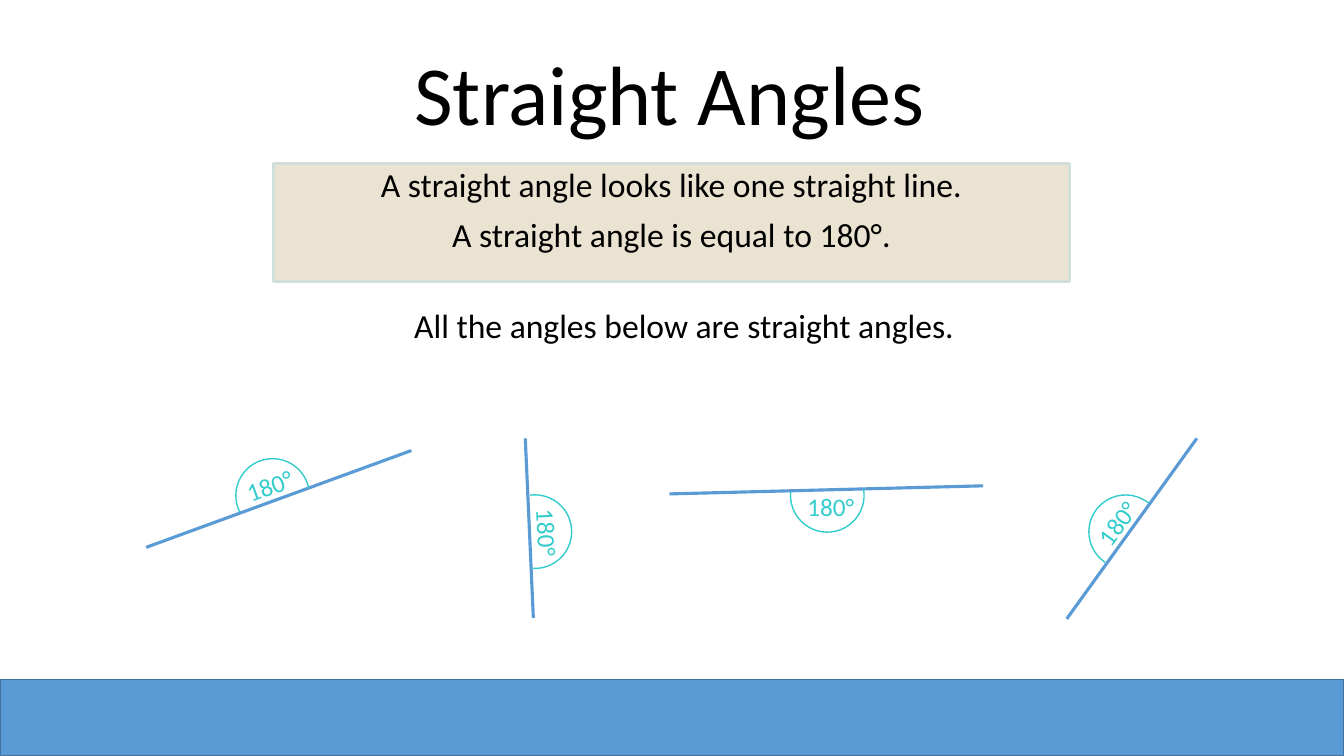
from dataclasses import dataclass

import lxml.etree
import pptx
import pptx.dml.color
import pptx.enum.shapes
import pptx.enum.text
import pptx.oxml.ns
import pptx.presentation
import pptx.shapes.autoshape
import pptx.shapes.base
import pptx.slide
import pptx.util

Inches = pptx.util.Inches
Pt = pptx.util.Pt
Shapes = pptx.enum.shapes.MSO_SHAPE
Align = pptx.enum.text.PP_ALIGN
Anchor = pptx.enum.text.MSO_ANCHOR


@dataclass(frozen=True)
class Theme:
    font: str = "Calibri"
    text: str = "000000"
    blue: str = "5B9BD5"
    blue_edge: str = "43739E"
    sand: str = "EBE3D2"
    sand_edge: str = "D1DFDA"
    teal: str = "33CCCC"
    title_size: float = 60
    body_size: float = 24
    label_size: float = 18
    thin: float = 1
    thick: float = 2.25


@dataclass(frozen=True)
class StraightAngle:
    """A line, the arc on one side of it and its label; arc angles are in degrees."""
    start: tuple[float, float]
    end: tuple[float, float]
    arc_corner: tuple[float, float]
    arc_turn: float
    arc_from: float
    arc_to: float
    label_corner: tuple[float, float]
    label_turn: float


THEME = Theme()
ARC_SIZE = 0.73
LABEL_SIZE = (1.39, 0.4)
ANGLES = [
    StraightAngle((4.08, 4.47), (1.45, 5.43), (2.34, 4.55), 300.3, 212.75, 48.59, (2.32, 4.49), 339.9),
    StraightAngle((5.21, 4.35), (5.29, 6.13), (4.94, 4.91), 47.5, 215.25, 45.79, (4.75, 5.45), 87.3),
    StraightAngle((9.75, 4.82), (6.64, 4.9), (7.84, 4.55), 136.8, 213, 48.59, (7.91, 4.83), 0),
    StraightAngle((11.87, 4.35), (10.58, 6.14), (10.8, 4.91), 264.1, 219.57, 45.02, (10.6, 4.7), 306.6),
]


def rgb(color: str) -> pptx.dml.color.RGBColor:
    return pptx.dml.color.RGBColor.from_string(color)


def write_text(box: pptx.shapes.autoshape.Shape, lines: list[str], *, size: float,
               color: str = THEME.text, align: Align = Align.CENTER,
               anchor: Anchor = Anchor.TOP, line_spacing: float = 1,
               space_before: float = 0) -> None:
    frame = box.text_frame
    frame.word_wrap = True
    frame.vertical_anchor = anchor
    for index, line in enumerate(lines):
        para = frame.add_paragraph() if index else frame.paragraphs[0]
        para.alignment = align
        para.line_spacing = line_spacing
        para.space_before = Pt(space_before)
        span = para.add_run()
        span.text = line
        span.font.name = THEME.font
        span.font.size = Pt(size)
        span.font.color.rgb = rgb(color)


def add_text(page: pptx.slide.Slide, left: float, top: float, width: float, height: float,
             text: str, **text_format) -> pptx.shapes.autoshape.Shape:
    box = page.shapes.add_textbox(Inches(left), Inches(top), Inches(width), Inches(height))
    write_text(box, [text], **text_format)
    return box


def add_outlined(page: pptx.slide.Slide, kind: Shapes, left: float, top: float, width: float,
                 height: float, *, edge: str, weight: float,
                 fill: str | None = None) -> pptx.shapes.autoshape.Shape:
    shape = page.shapes.add_shape(kind, Inches(left), Inches(top), Inches(width), Inches(height))
    shape.shadow.inherit = False
    if fill is None:
        shape.fill.background()
    else:
        shape.fill.solid()
        shape.fill.fore_color.rgb = rgb(fill)
    shape.line.color.rgb = rgb(edge)
    shape.line.width = Pt(weight)
    return shape


def add_line(page: pptx.slide.Slide, start: tuple[float, float], end: tuple[float, float]) -> None:
    line = page.shapes.add_connector(pptx.enum.shapes.MSO_CONNECTOR.STRAIGHT,
                                     *map(Inches, (*start, *end)))
    line.line.color.rgb = rgb(THEME.blue)
    line.line.width = Pt(THEME.thick)
    lxml.etree.SubElement(line._element.spPr, pptx.oxml.ns.qn("a:effectLst"))


def add_angle(page: pptx.slide.Slide, angle: StraightAngle) -> None:
    add_line(page, angle.start, angle.end)
    arc = add_outlined(page, Shapes.ARC, *angle.arc_corner, ARC_SIZE, ARC_SIZE,
                       edge=THEME.teal, weight=THEME.thin)
    # Adjustments count in 100000ths, arc angles in 60000ths of a degree.
    arc.adjustments[0] = angle.arc_from * 0.6
    arc.adjustments[1] = angle.arc_to * 0.6
    arc.rotation = angle.arc_turn
    label = add_text(page, *angle.label_corner, *LABEL_SIZE, "180°",
                     size=THEME.label_size, color=THEME.teal, align=Align.LEFT)
    label.rotation = angle.label_turn


def main() -> None:
    deck = pptx.Presentation()
    deck.slide_width, deck.slide_height = Inches(13.33), Inches(7.5)
    page = deck.slides.add_slide(deck.slide_layouts[6])

    add_outlined(page, Shapes.RECTANGLE, 0, 6.74, 13.33, 0.76,
                 fill=THEME.blue, edge=THEME.blue_edge, weight=THEME.thin)
    add_text(page, 0.89, 0.02, 11.5, 1.45, "Straight Angles",
             size=THEME.title_size, anchor=Anchor.BOTTOM, line_spacing=0.9)
    definition = add_outlined(page, Shapes.RECTANGLE, 2.71, 1.62, 7.9, 1.17,
                              fill=THEME.sand, edge=THEME.sand_edge, weight=THEME.thick)
    write_text(definition,
               ["A straight angle looks like one straight line.",
                "A straight angle is equal to 180°."],
               size=THEME.body_size, line_spacing=0.9, space_before=10)
    add_text(page, 3.64, 2.98, 6.29, 0.5, "All the angles below are straight angles.",
             size=THEME.body_size)
    for angle in ANGLES:
        add_angle(page, angle)

    deck.save("out.pptx")


if __name__ == "__main__":
    main()
